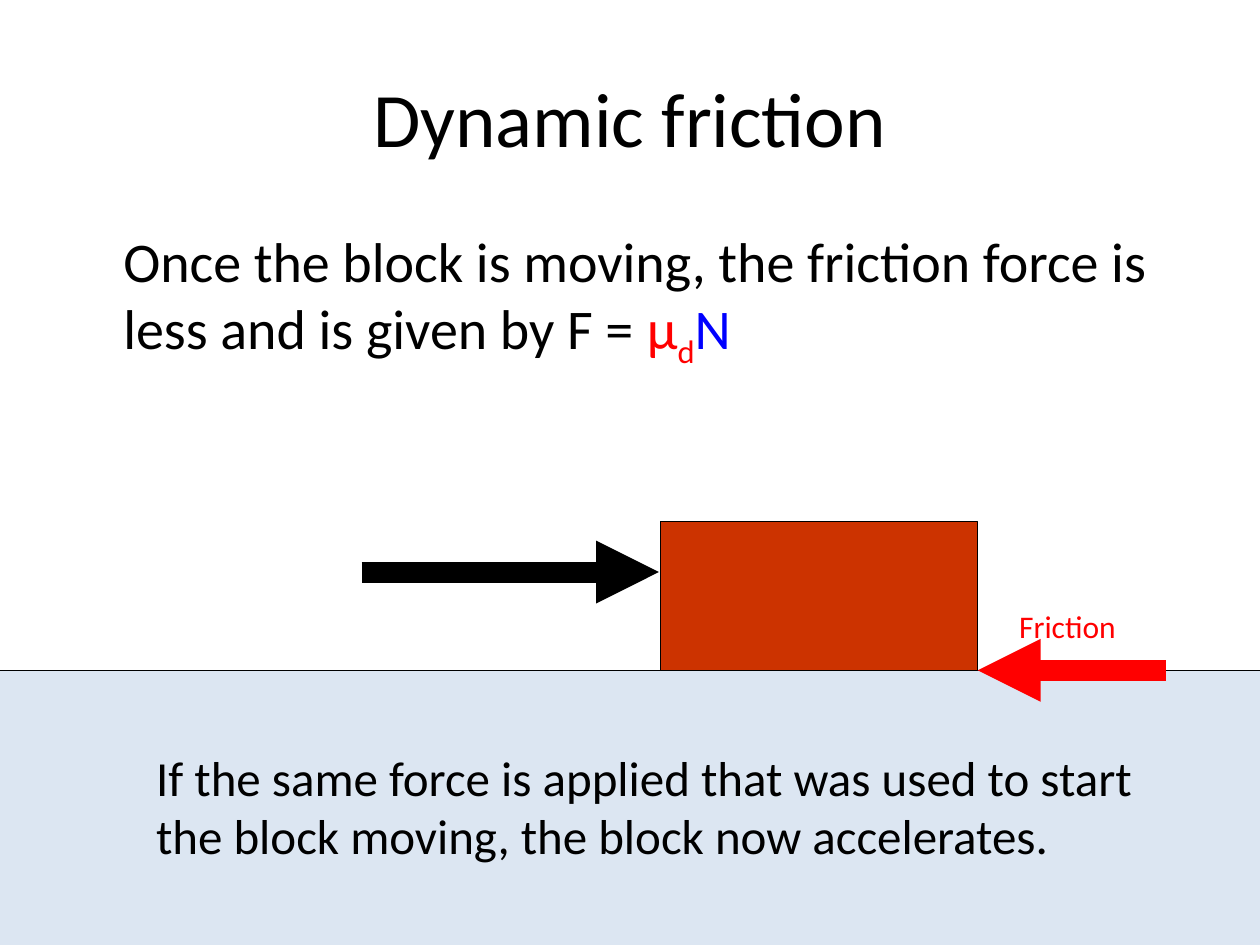
import pptx
import pptx.dml.color
import pptx.enum.shapes
import pptx.enum.text
import pptx.oxml
import pptx.oxml.ns
import pptx.util

Inches, Pt = pptx.util.Inches, pptx.util.Pt
RGB = pptx.dml.color.RGBColor.from_string
Kind = pptx.enum.shapes.MSO_SHAPE
Anchor = pptx.enum.text.MSO_ANCHOR
Align = pptx.enum.text.PP_ALIGN

HUES = {
    "black": "000000", "red": "FF0000", "blue": "0000FF",
    "ground": "DCE6F2", "block": "CC3300",
}
FLOOR = 5.32  # height at which the block meets the ground

deck = pptx.Presentation()
deck.slide_width, deck.slide_height = Inches(10), Inches(7.5)
slide = deck.slides.add_slide(deck.slide_layouts[6])


def write(box, size, runs, align=Align.LEFT, anchor=Anchor.TOP):
    """Add a text box; each run is (text, colour, baseline in percent)."""
    frame = slide.shapes.add_textbox(*map(Inches, box)).text_frame
    frame.word_wrap = True
    frame.vertical_anchor = anchor
    para = frame.paragraphs[0]
    para.alignment = align
    for text, hue, base in runs:
        run = para.add_run()
        run.text = text
        run.font.name = "Calibri"
        run.font.size = Pt(size)
        run.font.color.rgb = RGB(HUES[hue])
        if base:
            run._r.get_or_add_rPr().set("baseline", str(base * 1000))


write((0.5, 0.3, 9, 1.25), 44, [("Dynamic friction", "black", 0)],
      Align.CENTER, Anchor.MIDDLE)
write((0.88, 1.75, 8.62, 4.95), 32, [
    ("Once the block is moving, the friction force is less and is given by F = ",
     "black", 0),
    ("μ", "red", 0),
    ("d", "red", -25),
    ("N", "blue", 0),
])

# Ground, then the block resting on it
for hue, box in (
    ("ground", (-0.2, FLOOR, 10.4, 2.28)),
    ("block", (5.24, FLOOR - 1.18, 2.52, 1.18)),
):
    rect = slide.shapes.add_shape(Kind.RECTANGLE, *map(Inches, box))
    rect.shadow.inherit = False
    rect.fill.solid()
    rect.fill.fore_color.rgb = RGB(HUES[hue])
    rect.line.color.rgb = RGB(HUES["black"])
    rect.line.width = Pt(0.75)

# Applied force and friction, each pointing at the block
for hue, start, end, y in (
    ("black", 2.87, 5.23, 4.54),
    ("red", 9.25, 7.76, FLOOR),
):
    force = slide.shapes.add_connector(
        pptx.enum.shapes.MSO_CONNECTOR.STRAIGHT,
        Inches(start), Inches(y), Inches(end), Inches(y))
    force.line.color.rgb = RGB(HUES[hue])
    force.line.width = Pt(12)
    tip = pptx.oxml.parse_xml(
        f'<a:tailEnd {pptx.oxml.ns.nsdecls("a")} type="triangle"/>')
    force.line._get_or_add_ln().append(tip)
    props = force._element.spPr
    props.append(props.makeelement(pptx.oxml.ns.qn("a:effectLst"), {}))

write((7.99, 4.77, 1.73, 0.4), 18, [("Friction", "red", 0)])
write((1.14, 5.88, 8.19, 1.5), 28, [
    ("If the same force is applied that was used to start the block moving, "
     "the block now accelerates.", "black", 0),
])

deck.save("out.pptx")
